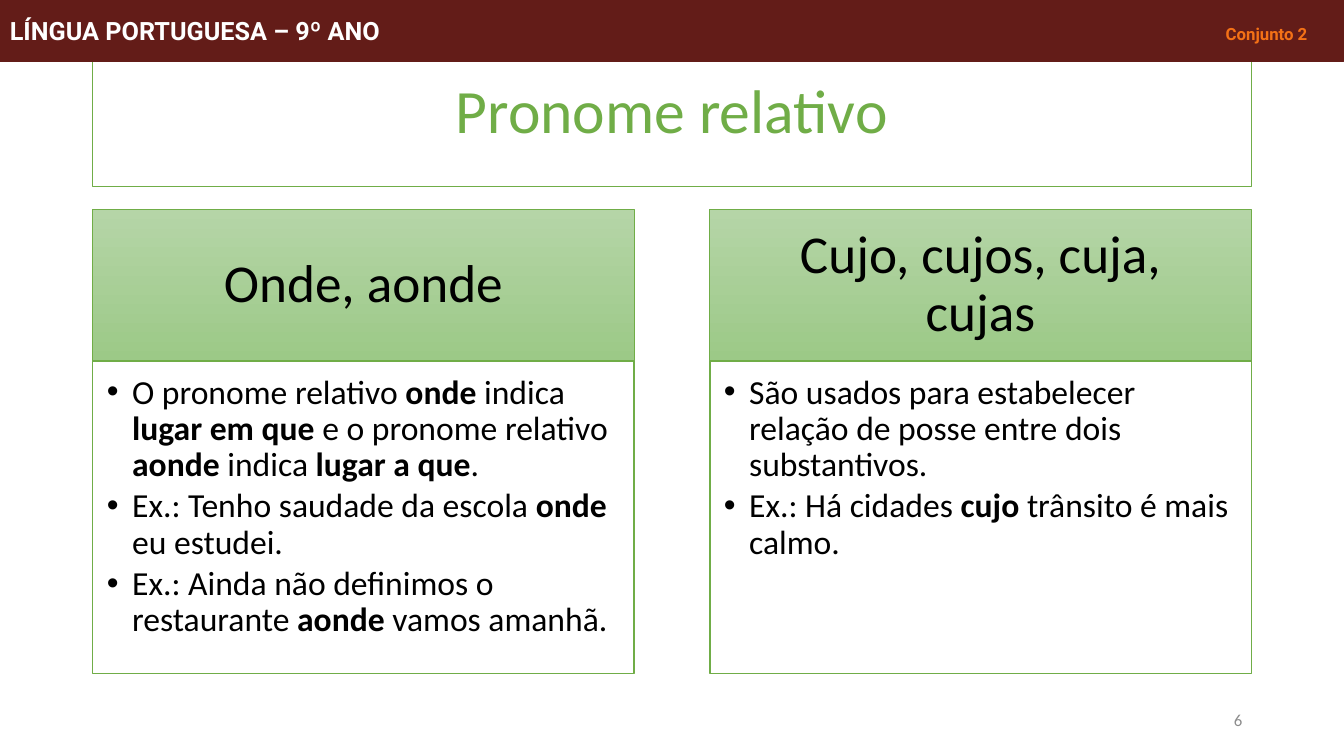
"""Build the slide on Portuguese relative pronouns."""
import pptx
import pptx.util
import pptx.dml.color
import pptx.enum.shapes
import pptx.enum.text
import pptx.oxml
import pptx.oxml.ns

TITLE = "Pronome relativo"
BAND = ("LÍNGUA PORTUGUESA – 9º ANO", "\tConjunto 2")
PAGE = "6"
CARDS = [
    ("Onde, aonde", [
        "O pronome relativo *onde* indica *lugar em que *e o pronome relativo "
        "*aonde* indica *lugar a que*.",
        "Ex.: Tenho saudade da escola *onde* eu estudei.",
        "Ex.: Ainda não definimos o restaurante *aonde* vamos amanhã.",
    ]),
    ("Cujo, cujos, cuja, cujas", [
        "São usados para estabelecer relação de posse entre dois substantivos.",
        "Ex.: Há cidades *cujo* trânsito é mais calmo.",
    ]),
]
THEME = {
    "green": "70AD47", "light": "B5D5A7", "deep": "9CC987", "wine": "631C18",
    "orange": "F47116", "white": "FFFFFF", "black": "000000", "gray": "8C8C8C",
    "font": "Calibri", "band font": "Roboto",
    "title": 44, "head": 38, "body": 24, "band": 18, "small": 12,
}
PX = 9144
WIDE, HIGH = 1333, 750
LEFT, TOP, CARD, STEP = 92, 208, 537, 612
HEAD, BODY = 150, 310
TAB, HANG = 1287, 25
ALIGN = pptx.enum.text.PP_ALIGN
ANCHOR = pptx.enum.text.MSO_ANCHOR


def color(name):
    return pptx.dml.color.RGBColor.from_string(THEME[name])


def place(shape, x, y, w, h):
    shape.left, shape.top, shape.width, shape.height = (v * PX for v in (x, y, w, h))


def edge(shape, name, width):
    shape.line.color.rgb = color(name)
    shape.line.width = pptx.util.Pt(width)


def frame(shape, pads, anchor):
    box = shape.text_frame
    box.word_wrap = True
    box.auto_size = pptx.enum.text.MSO_AUTO_SIZE.NONE
    box.vertical_anchor = anchor
    box.margin_left, box.margin_top, box.margin_right, box.margin_bottom = (
        v * PX for v in pads)
    return box


def style(run, size, tint, bold=False, font="font"):
    run.font.name = THEME[font]
    run.font.size = pptx.util.Pt(THEME[size])
    run.font.color.rgb = color(tint)
    run.font.bold = bold


def space(para, after=0):
    para.line_spacing = 0.9
    para.space_before = pptx.util.Pt(0)
    para.space_after = pptx.util.Pt(after)


def label(shape, text, size, tint, pads, align):
    box = frame(shape, pads, ANCHOR.MIDDLE)
    box.text = text
    para = box.paragraphs[0]
    para.alignment = align
    space(para)
    style(para.runs[0], size, tint)


def points(shape, items):
    box = frame(shape, (14, 14, 19, 21), ANCHOR.TOP)
    for i, item in enumerate(items):
        para = box.add_paragraph() if i else box.paragraphs[0]
        space(para, 3.6)
        props = para._p.get_or_add_pPr()
        props.set("marL", str(HANG * PX))
        props.set("indent", str(-HANG * PX))
        for j, part in enumerate(item.split("*")):
            run = para.add_run()
            run.text = part
            style(run, "body", "black", j % 2 == 1)


def card(head, body, x, name, items):
    place(head, x, TOP, CARD, HEAD)
    head.fill.gradient()
    head.fill.gradient_angle = 270
    for stop, tint in zip(head.fill.gradient_stops, ("light", "deep")):
        stop.color.rgb = color(tint)
    edge(head, "green", 0.5)
    label(head, name, "head", "black", (30, 17, 30, 17), ALIGN.CENTER)
    place(body, x, TOP + HEAD, CARD, BODY)
    body.fill.solid()
    body.fill.fore_color.rgb = color("white")
    edge(body, "green", 1)
    points(body, items)


def banner(shapes):
    band = shapes.add_shape(pptx.enum.shapes.MSO_SHAPE.RECTANGLE, 0, 0, WIDE * PX, 61 * PX)
    band.shadow.inherit = False
    band.fill.solid()
    band.fill.fore_color.rgb = color("wine")
    edge(band, "wine", 0.75)
    para = frame(band, (10, 5, 10, 5), ANCHOR.MIDDLE).paragraphs[0]
    para.alignment = ALIGN.LEFT
    props = para._p.get_or_add_pPr()
    props.append(pptx.oxml.parse_xml(
        f'<a:tabLst {pptx.oxml.ns.nsdecls("a")}><a:tab pos="{TAB * PX}" algn="r"/></a:tabLst>'))
    for text, size, tint in zip(BAND, ("band", "small"), ("white", "orange")):
        run = para.add_run()
        run.text = text
        style(run, size, tint, True, "band font")


def main():
    deck = pptx.Presentation()
    deck.slide_width, deck.slide_height = WIDE * PX, HIGH * PX
    slide = deck.slides.add_slide(deck.slide_layouts[4])
    shapes = slide.shapes
    title, *slots = slide.placeholders
    for i, (name, items) in enumerate(CARDS):
        card(slots[2 * i], slots[2 * i + 1], LEFT + i * STEP, name, items)
    place(title, LEFT, 40, STEP + CARD, 145)
    edge(title, "green", 0.75)
    label(title, TITLE, "title", "green", (10, 5, 10, 5), ALIGN.CENTER)
    page = shapes.add_textbox(942 * PX, 695 * PX, 300 * PX, 40 * PX)
    label(page, PAGE, "small", "gray", (10, 5, 10, 5), ALIGN.RIGHT)
    banner(shapes)
    deck.save("out.pptx")


if __name__ == "__main__":
    main()
